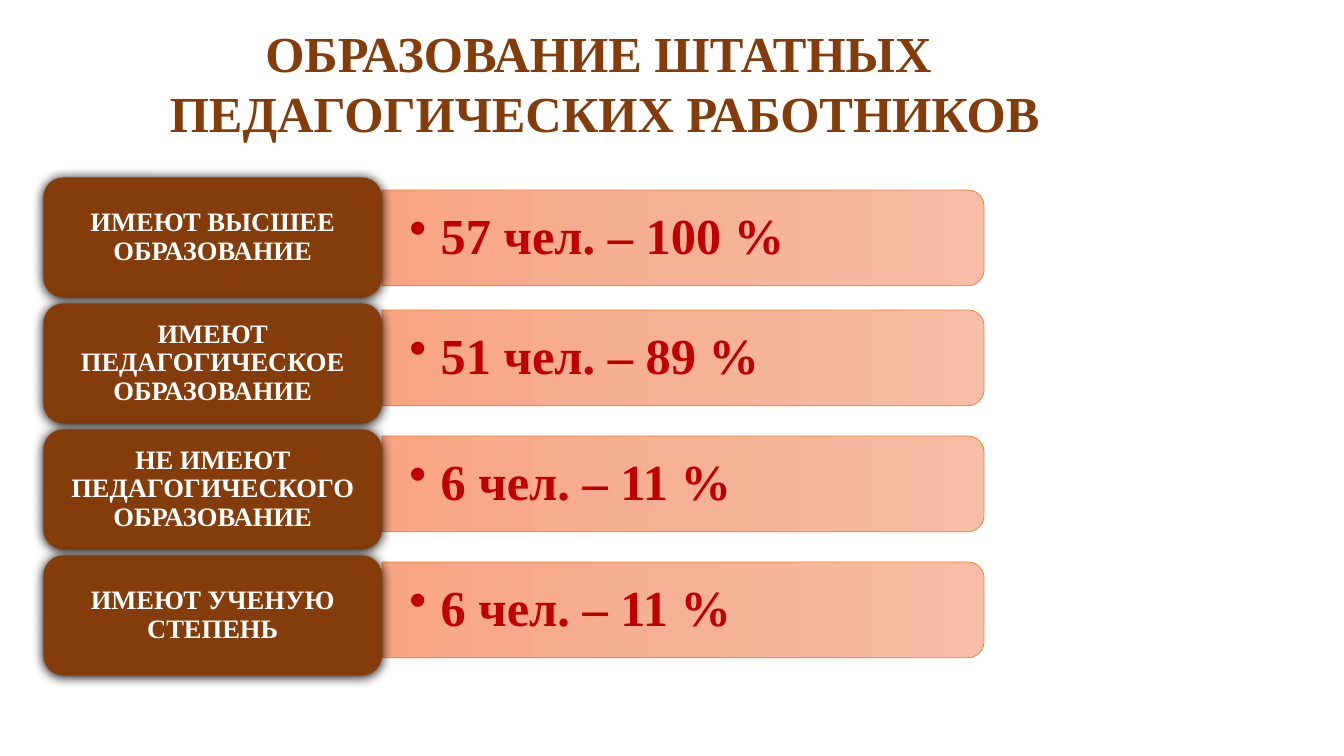
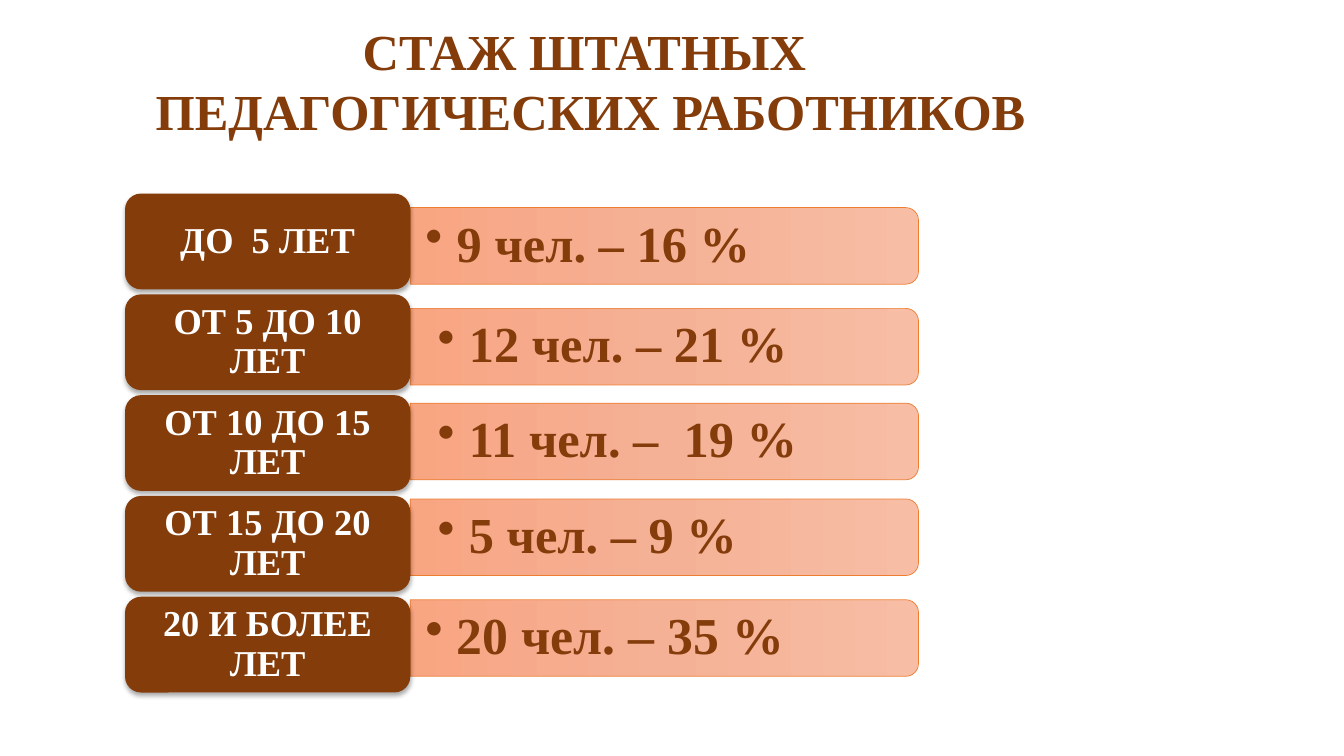
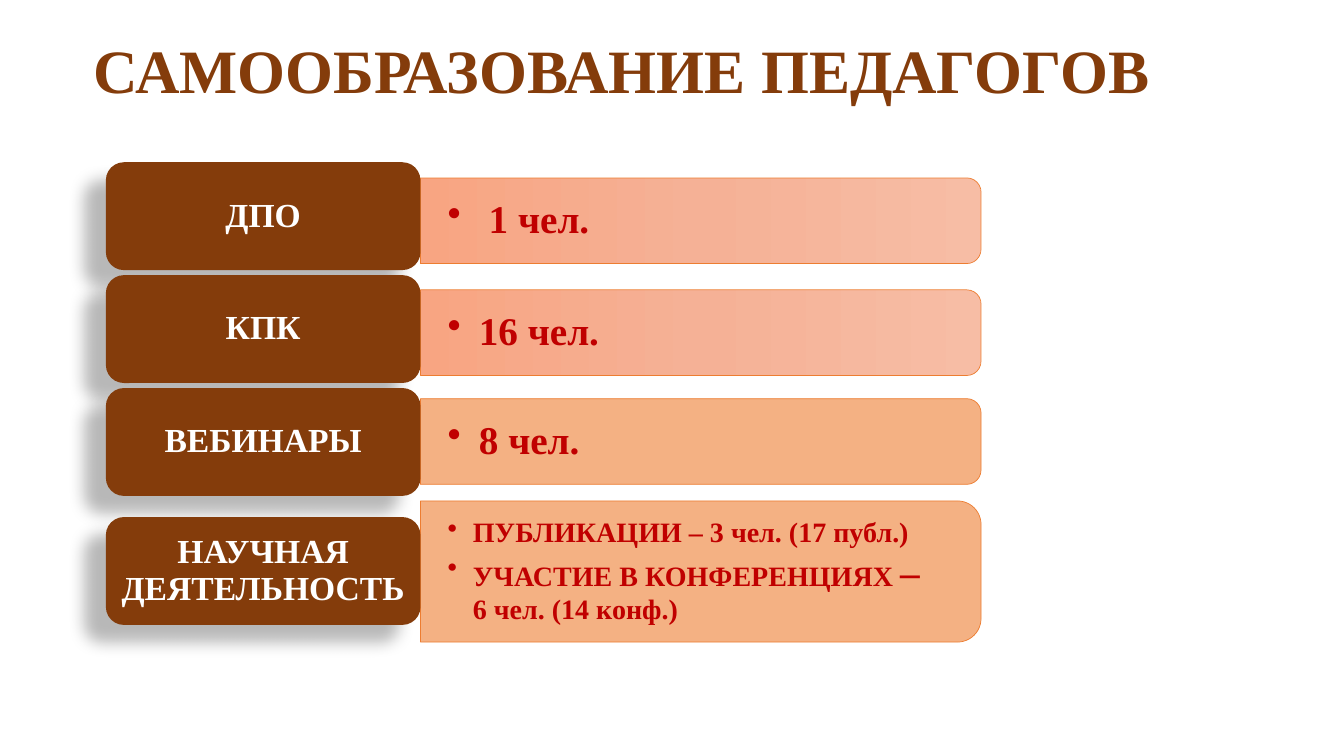
import copy

import pptx
import pptx.dml.color
import pptx.enum.shapes
import pptx.enum.text
import pptx.oxml
import pptx.oxml.ns
import pptx.util

Inches, Pt = pptx.util.Inches, pptx.util.Pt
SHAPE = pptx.enum.shapes.MSO_SHAPE
ALIGN = pptx.enum.text.PP_ALIGN
ANCHOR = pptx.enum.text.MSO_ANCHOR
qn = pptx.oxml.ns.qn

FONT = "Times New Roman"
COLORS = {"brown": "843C0B", "red": "C00000", "white": "FFFFFF",
          "orange": "ED7D31", "peach": "F4B183", "black": "000000"}
BAR_GRADIENT = [(0, "F7BDA5"), (0.5, "F5B196"), (1, "F8A582")]
LABEL_MARGINS = (0.08, 0.04)
WIDE_MARGINS, NARROW_MARGINS = (0.27, 0.14), (0.15, 0.08)

# A row is label, paragraphs of (text, size) runs, centre of its bar, own settings.
# A shadow is opacity in percent, blur and distance in points, direction in degrees.
SLIDES = [
    {"title": "ОБРАЗОВАНИЕ ШТАТНЫХ \vПЕДАГОГИЧЕСКИХ РАБОТНИКОВ",
     "title_box": (0, 0.17, 12, 1.31),
     "title_style": {"size": 36, "align": ALIGN.CENTER},
     "label_box": (0.43, 1.76, 3.36, 1.19), "pitch": 1.25, "label_size": 19,
     "shadow": (100, 8.5, 1, 90),
     "bar": {"width": 5.97, "height": 0.95}, "value_color": "red",
     "rows": [
         ("ИМЕЮТ ВЫСШЕЕ ОБРАЗОВАНИЕ", [[("57 чел. – 100 %", 36)]], 2.36, {}),
         ("ИМЕЮТ ПЕДАГОГИЧЕСКОЕ ОБРАЗОВАНИЕ", [[("51 чел. – 89 %", 36)]], 3.55, {}),
         ("НЕ ИМЕЮТ ПЕДАГОГИЧЕСКОГО ОБРАЗОВАНИЕ", [[("6 чел. – 11 %", 36)]], 4.8, {}),
         ("ИМЕЮТ УЧЕНУЮ СТЕПЕНЬ", [[("6 чел. – 11 %", 36)]], 6.05, {}),
     ]},
    {"title": "СТАЖ ШТАТНЫХ \vПЕДАГОГИЧЕСКИХ РАБОТНИКОВ",
     "title_box": (-0.14, 0.15, 12, 1.31),
     "title_style": {"size": 36, "align": ALIGN.CENTER},
     "label_box": (1.24, 1.92, 2.83, 0.95), "pitch": 1, "label_size": 26,
     "shadow": (32, 3.5, 2.2, 90),
     "bar": {"width": 5.04, "height": 0.76}, "value_color": "brown",
     "rows": [
         ("ДО  5 ЛЕТ", [[("9 чел. – 16 %", 36)]], 2.44, {"margins": NARROW_MARGINS}),
         ("ОТ 5 ДО 10 ЛЕТ", [[("12 чел. – 21 %", 36)]], 3.44, {}),
         ("ОТ 10 ДО 15 ЛЕТ", [[("11 чел. –  19 %", 36)]], 4.38, {}),
         ("ОТ 15 ДО 20 ЛЕТ", [[("5 чел. – 9 %", 36)]], 5.33, {}),
         ("20 И БОЛЕЕ ЛЕТ", [[("20 чел. – 35 %", 37)]], 6.33, {"margins": NARROW_MARGINS}),
     ]},
    {"title": "САМООБРАЗОВАНИЕ ПЕДАГОГОВ",
     "title_box": (0.83, 0, 11.5, 1.45),
     "title_style": {"size": 44, "anchor": ANCHOR.MIDDLE, "spacing": 0.9},
     "label_box": (1.05, 1.61, 3.12, 1.07), "pitch": 1.12, "label_size": 24,
     "shadow": (28, 11.8, 19.7, 141),
     "bar": {"width": 5.56, "height": 0.85}, "value_color": "red",
     "rows": [
         ("ДПО", [[(" 1 чел.", 28)]], 2.19, {}),
         ("КПК", [[("16 чел.", 28)]], 3.3, {}),
         ("ВЕБИНАРЫ", [[("8 чел.", 28)]], 4.38, {"fill": "peach"}),
         ("НАУЧНАЯ ДЕЯТЕЛЬНОСТЬ",
          [[("ПУБЛИКАЦИИ – 3 чел. (17 публ.)", 20)],
           [("УЧАСТИЕ В КОНФЕРЕНЦИЯХ ", 20), ("– \v", 28), ("6 чел. (14 конф.)", 20)]],
          5.67, {"fill": "peach", "height": 1.4, "indent": 0.25, "drop": 0.16}),
     ]},
]


def rgb(name):
    return pptx.dml.color.RGBColor.from_string(COLORS.get(name, name))


def write(tf, paragraphs, color, align=ALIGN.LEFT, anchor=ANCHOR.TOP,
          spacing=1.0, margins=(0.1, 0.05), indent=None):
    """Fill a text frame; an indent turns its paragraphs into bullets."""
    side, edge = (Inches(m) for m in margins)
    frame = {"word_wrap": True, "vertical_anchor": anchor, "margin_left": side,
             "margin_right": side, "margin_top": edge, "margin_bottom": edge}
    for name, value in frame.items():
        setattr(tf, name, value)
    for i, runs in enumerate(paragraphs):
        p = tf.add_paragraph() if i else tf.paragraphs[0]
        p.alignment, p.line_spacing = align, spacing
        if i:
            p.space_before = Pt(3)
        if indent:
            pPr = p._p.get_or_add_pPr()
            pPr.set("marL", str(Inches(indent)))
            pPr.set("indent", str(-Inches(indent)))
            pPr.append(pptx.oxml.parse_xml(
                f'<a:buChar {pptx.oxml.ns.nsdecls("a")} char="•"/>'))
        for text, size in runs:
            # Line breaks sit between runs, so each part is its own run.
            for j, part in enumerate(text.split("\v")):
                if j:
                    p.add_line_break()
                if not part:
                    continue
                r = p.add_run()
                r.text = part
                font = {"name": FONT, "size": Pt(size), "bold": True}
                for name, value in font.items():
                    setattr(r.font, name, value)
                r.font.color.rgb = rgb(color)


def add_text(slide, box, paragraphs, color, **style):
    sp = slide.shapes.add_textbox(*map(Inches, box))
    write(sp.text_frame, paragraphs, color, **style)


def add_title(slide, text, box, size, **style):
    add_text(slide, box, [[(text, size)]], "brown", **style)


def fill_gradient(sp, stops):
    sp.fill.gradient()
    sp.fill.gradient_angle = 270
    stop_list = sp._element.spPr.find(".//" + qn("a:gsLst"))
    stop_list.insert(1, copy.deepcopy(stop_list[0]))
    for stop, (position, color) in zip(sp.fill.gradient_stops, stops):
        stop.position = position
        stop.color.rgb = rgb(color)


def add_bar(slide, left, center, paragraphs, color, width, height,
            fill=None, margins=WIDE_MARGINS, indent=0.31):
    """Bar rounded on its right side, made by turning a top-rounded shape."""
    box = (left + (width - height) / 2, center - width / 2, height, width)
    sp = slide.shapes.add_shape(SHAPE.ROUND_2_SAME_RECTANGLE, *map(Inches, box))
    sp.rotation = 90
    sp.shadow.inherit = False
    if fill:
        sp.fill.solid()
        sp.fill.fore_color.rgb = rgb(fill)
    else:
        fill_gradient(sp, BAR_GRADIENT)
    sp.line.color.rgb = rgb("orange")
    sp.line.width = Pt(0.5)
    add_text(slide, (left, center - height / 2, width - 0.05, height), paragraphs,
             color, anchor=ANCHOR.MIDDLE, spacing=0.9, margins=margins, indent=indent)


def add_label(slide, box, text, size, shadow):
    sp = slide.shapes.add_shape(SHAPE.ROUNDED_RECTANGLE, *map(Inches, box))
    sp.fill.solid()
    sp.fill.fore_color.rgb = rgb("brown")
    sp.line.fill.background()
    sp.shadow.inherit = False
    opacity, blur, distance, direction = shadow
    sp._element.spPr.find(qn("a:effectLst")).append(pptx.oxml.parse_xml(
        f'<a:outerShdw {pptx.oxml.ns.nsdecls("a")} blurRad="{Pt(blur)}" '
        f'dist="{Pt(distance)}" dir="{direction * 60000}" rotWithShape="0">'
        f'<a:srgbClr val="{COLORS["black"]}"><a:alpha val="{opacity * 1000}"/>'
        f'</a:srgbClr></a:outerShdw>'))
    write(sp.text_frame, [[(text, size)]], "white", align=ALIGN.CENTER,
          anchor=ANCHOR.MIDDLE, spacing=0.9, margins=LABEL_MARGINS)


def build_slide(prs, content):
    slide = prs.slides.add_slide(prs.slide_layouts[6])
    add_title(slide, content["title"], content["title_box"], **content["title_style"])
    left, top, width, height = content["label_box"]
    for i, (label, paragraphs, center, own) in enumerate(content["rows"]):
        bar = {**content["bar"], **own}
        label_top = top + i * content["pitch"] + bar.pop("drop", 0)
        add_bar(slide, left + width, center, paragraphs, content["value_color"], **bar)
        add_label(slide, (left, label_top, width, height), label,
                  content["label_size"], content["shadow"])


def main():
    prs = pptx.Presentation()
    prs.slide_width, prs.slide_height = Inches(13.33), Inches(7.5)
    for content in SLIDES:
        build_slide(prs, content)
    prs.save("out.pptx")


if __name__ == "__main__":
    main()
